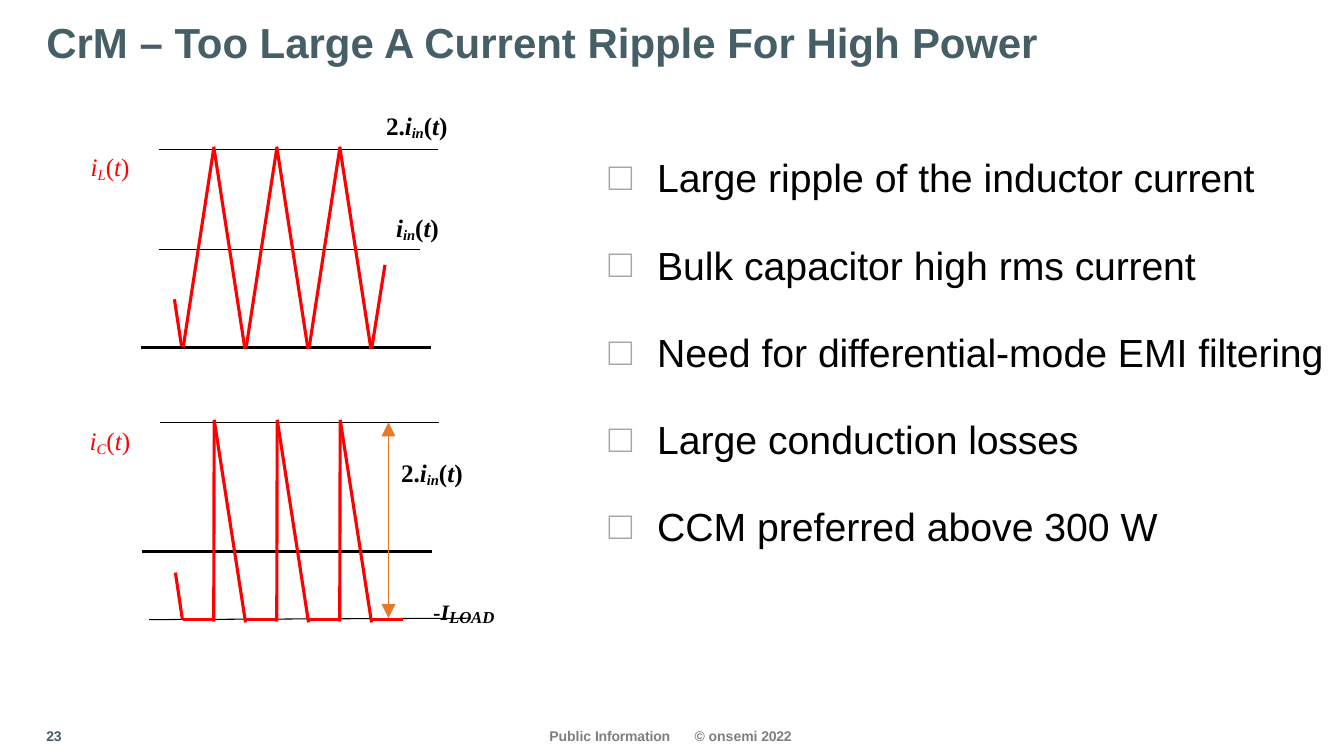
import dataclasses
import typing

import lxml.etree
import pptx
import pptx.dml.color
import pptx.enum.shapes
import pptx.enum.text
import pptx.oxml.ns
import pptx.util

RED, BLACK, ORANGE, TEAL, GRAY = "FF0000", "000000", "E87928", "465E66", "7F7F7F"
PERIOD = 45
PEAKS = [152.7 + PERIOD * cycle for cycle in range(3)]


@dataclasses.dataclass
class Run:
    text: str
    spacing: float = 0
    italic: bool = False
    baseline: int = 0
    size: typing.Optional[float] = None


@dataclasses.dataclass
class Label:
    left: float
    top: float
    width: float
    height: float
    runs: list[Run]
    size: float
    color: str = BLACK
    bold: bool = False
    font: str = "Arial"
    inset_left: float = 0
    inset_top: float = 1.7
    bullet: str = ""


@dataclasses.dataclass
class Stroke:
    x1: float
    y1: float
    x2: float
    y2: float
    color: str = RED
    weight: float = 2.25
    arrows: bool = False


def rgb(value: str) -> pptx.dml.color.RGBColor:
    return pptx.dml.color.RGBColor.from_string(value)


def add_xml(parent: typing.Any, tag: str, **attributes: str) -> typing.Any:
    element = lxml.etree.SubElement(parent, pptx.oxml.ns.qn(tag))
    for name, value in attributes.items():
        element.set(name, value)
    return element


def draw_label(slide: typing.Any, label: Label) -> None:
    box = slide.shapes.add_textbox(*map(pptx.util.Pt, (label.left, label.top, label.width, label.height)))
    frame = box.text_frame
    frame.word_wrap = True
    frame.auto_size = pptx.enum.text.MSO_AUTO_SIZE.NONE
    frame.margin_left = pptx.util.Pt(label.inset_left)
    frame.margin_top = pptx.util.Pt(label.inset_top)
    frame.margin_right = frame.margin_bottom = 0
    paragraph = frame.paragraphs[0]
    if label.bullet:
        properties = paragraph._p.get_or_add_pPr()
        properties.set("marL", str(pptx.util.Pt(36)))
        properties.set("indent", str(pptx.util.Pt(-34.6)))
        add_xml(add_xml(properties, "a:buClr"), "a:srgbClr", val="A6A6A6")
        add_xml(properties, "a:buFont", typeface="Arial")
        add_xml(properties, "a:buChar", char=label.bullet)
    for part in label.runs:
        run = paragraph.add_run()
        run.text = part.text
        run.font.name = label.font
        run.font.size = pptx.util.Pt(part.size or label.size)
        run.font.bold = label.bold
        run.font.italic = part.italic
        run.font.color.rgb = rgb(label.color)
        properties = run._r.get_or_add_rPr()
        properties.set("spc", str(round(part.spacing * 100)))
        if part.baseline:
            properties.set("baseline", str(part.baseline * 1000))


def draw_stroke(slide: typing.Any, stroke: Stroke) -> None:
    line = slide.shapes.add_connector(
        pptx.enum.shapes.MSO_CONNECTOR.STRAIGHT,
        *map(pptx.util.Pt, (stroke.x1, stroke.y1, stroke.x2, stroke.y2)),
    )
    line.line.color.rgb = rgb(stroke.color)
    line.line.width = pptx.util.Pt(stroke.weight)
    if stroke.arrows:
        outline = line.line._get_or_add_ln()
        for end in ("a:headEnd", "a:tailEnd"):
            add_xml(outline, end, type="triangle", w="lg", len="lg")
    add_xml(line._element.spPr, "a:effectLst")


def current_name(subscript: str, prefix: str = "") -> list[Run]:
    runs = [Run(prefix, -0.1)] if prefix else []
    return runs + [
        Run("i", -0.1, True),
        Run(subscript, -0.1, True, -14),
        Run("(", -0.1),
        Run("t", -0.1, True),
        Run(")", -0.1),
    ]


def math_label(left: float, top: float, width: float, runs: list[Run],
               color: str = BLACK, size: float = 18) -> Label:
    return Label(left, top, width, 23.8, runs, size, color, color == BLACK, "Times New Roman", 2.9)


def inductor_strokes() -> list[Stroke]:
    strokes = [
        Stroke(113.8, 178, 300.2, 178, BLACK, 0.75),
        Stroke(113.8, 106.5, 313.2, 106.5, BLACK, 0.75),
        Stroke(100.8, 248.4, 308.2, 248.4, BLACK),
        Stroke(124.6, 213.8, 129.6, 247),
        Stroke(265.7, 247.8, 275, 189.2),
    ]
    for peak in PEAKS:
        strokes.append(Stroke(peak - 21.8, 248, peak, 106))
        strokes.append(Stroke(peak, 104.7, peak + 22.3, 249.4))
    return strokes


def capacitor_strokes() -> list[Stroke]:
    strokes = [
        Stroke(106.6, 442.6, 336.2, 441.6, BLACK, 0.75),
        Stroke(114.5, 301.7, 313.9, 301.7, BLACK, 0.75),
        Stroke(101.5, 393.8, 308.9, 393.8, BLACK),
        Stroke(125.3, 409, 130.3, 442.5),
    ]
    for peak in PEAKS:
        strokes.append(Stroke(peak, 444, peak + 0.3, 301))
        strokes.append(Stroke(peak + 0.3, 299.8, peak + 22.7, 444.6))
    for cycle in range(4):
        start = 130.5 + PERIOD * cycle
        strokes.append(Stroke(start, 442.8, start + 22.3, 442.8))
    strokes.append(Stroke(277.5, 301.7, 277.5, 441.5, ORANGE, 0.75, True))
    return strokes


def labels() -> list[Label]:
    title = [Run("CrM – "), Run("Too ", -0.1), Run("Large A Current Ripple For High"), Run(" Power", -0.1)]
    load = [Run("-", 0, True, 9), Run("I", -0.1, True, 9), Run("LOAD", -0.1, True, 0, 12)]
    points = [
        [Run("Large ripple of the inductor "), Run("current", -0.1)],
        [Run("Bulk capacitor high rms "), Run("current", -0.1)],
        [Run("Need for "), Run("differential-", -0.1), Run("mode EMI "), Run("filtering", -0.1)],
        [Run("Large conduction "), Run("losses", -0.1)],
        [Run("CCM preferred above 300 "), Run("W", -0.5)],
    ]
    bullets = [
        Label(433.4, 108 + 62.3 * row, 520, 35.3, runs, 28, bullet="□")
        for row, runs in enumerate(points)
    ]
    footers = [
        Label(left, 519.8, width, 13, runs, 10, color, True, inset_left=inset, inset_top=0)
        for left, width, runs, color, inset in (
            (30.2, 18, [Run("23", -0.2)], TEAL, 2.9),
            (391.7, 92, [Run("Public "), Run("Information", -0.1)], GRAY, 0.7),
            (495.4, 73, [Run("© onsemi "), Run("2022", -0.2)], GRAY, 0.7),
        )
    ]
    return [
        Label(32.4, 10.1, 859, 38.2, title, 30, TEAL, True, inset_left=0.7),
        *bullets,
        math_label(280.1, 149.8, 38.2, current_name("in")),
        math_label(272.9, 77, 51.8, current_name("in", "2.")),
        math_label(61.9, 106.6, 34.6, current_name("L"), RED),
        math_label(306.7, 416.9, 51.8, load, size=27),
        math_label(283.7, 324.7, 51.8, current_name("in", "2.")),
        math_label(61.2, 302.4, 36, current_name("C"), RED),
        *footers,
    ]


def main() -> None:
    presentation = pptx.Presentation()
    presentation.slide_width = pptx.util.Pt(960)
    presentation.slide_height = pptx.util.Pt(540)
    slide = presentation.slides.add_slide(presentation.slide_layouts[6])
    for stroke in inductor_strokes() + capacitor_strokes():
        draw_stroke(slide, stroke)
    for label in labels():
        draw_label(slide, label)
    presentation.save("out.pptx")


if __name__ == "__main__":
    main()
